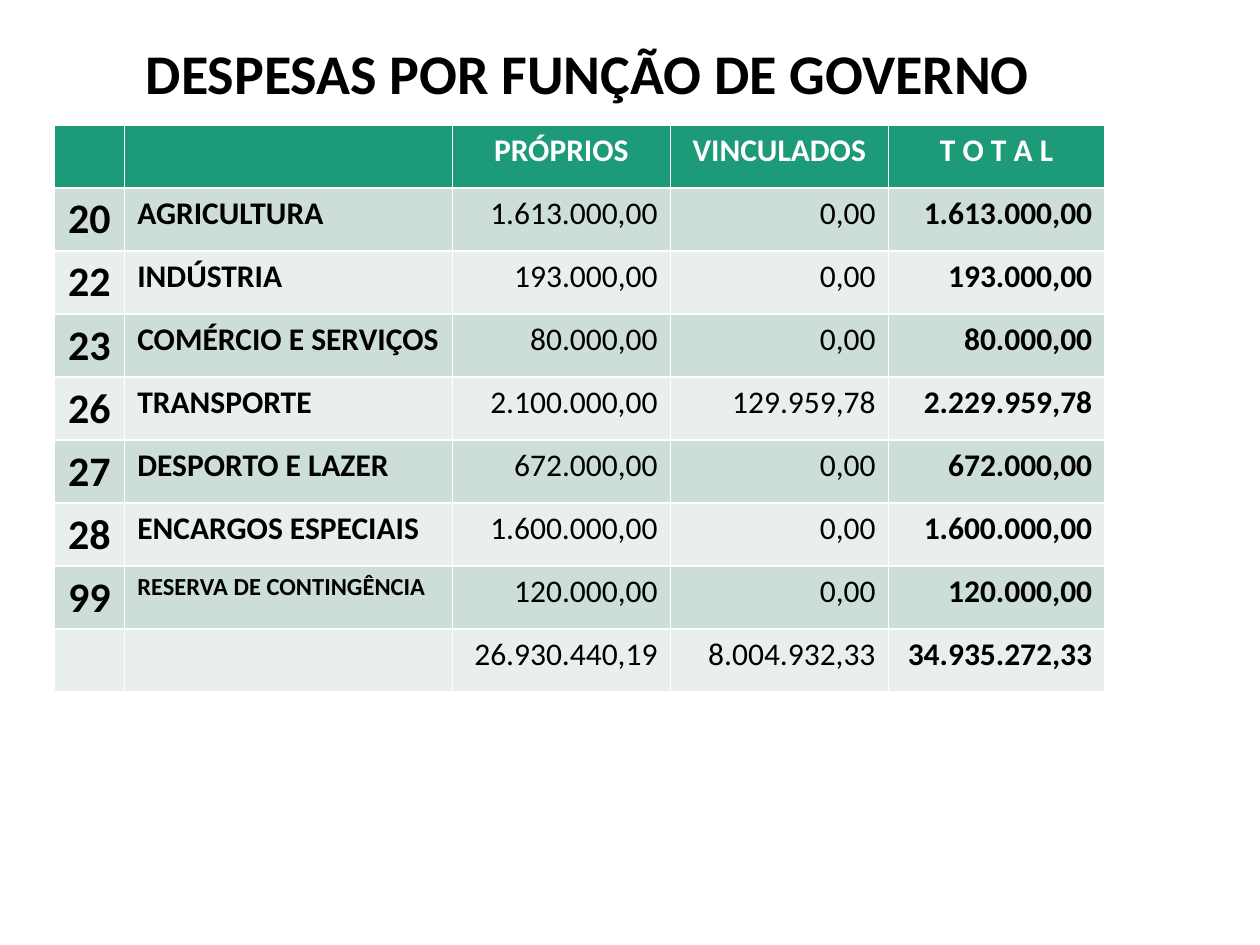
"""Build the slide with the table of expenses by government function."""
from pptx import Presentation
from pptx.dml.color import RGBColor
from pptx.enum.text import MSO_ANCHOR, PP_ALIGN
from pptx.util import Inches, Pt

TITLE = "DESPESAS POR FUNÇÃO DE GOVERNO"
HEADER = ("", "", "PRÓPRIOS", "VINCULADOS", "T O T A L")
EXPENSES = [
    ("20", "AGRICULTURA", "1.613.000,00", "0,00", "1.613.000,00"),
    ("22", "INDÚSTRIA", "193.000,00", "0,00", "193.000,00"),
    ("23", "COMÉRCIO E SERVIÇOS", "80.000,00", "0,00", "80.000,00"),
    ("26", "TRANSPORTE", "2.100.000,00", "129.959,78", "2.229.959,78"),
    ("27", "DESPORTO E LAZER", "672.000,00", "0,00", "672.000,00"),
    ("28", "ENCARGOS ESPECIAIS", "1.600.000,00", "0,00", "1.600.000,00"),
    ("99", "RESERVA DE CONTINGÊNCIA", "120.000,00", "0,00", "120.000,00"),
    ("", "", "26.930.440,19", "8.004.932,33", "34.935.272,33"),
]
COLUMNS = [
    (0.56, PP_ALIGN.CENTER, 24, True),
    (2.6, PP_ALIGN.LEFT, 18, True),
    (1.73, PP_ALIGN.RIGHT, 18, False),
    (1.73, PP_ALIGN.RIGHT, 18, False),
    (1.72, PP_ALIGN.RIGHT, 18, True),
]
SMALL_LABELS = {"RESERVA DE CONTINGÊNCIA": 14}
ROW_HEIGHT = 0.5

FONT = "Calibri"
BLACK = RGBColor(0x00, 0x00, 0x00)
WHITE = RGBColor(0xFF, 0xFF, 0xFF)
GREEN = RGBColor(0x1D, 0x9A, 0x78)
BANDS = (RGBColor(0xCD, 0xDE, 0xD6), RGBColor(0xE8, 0xEF, 0xEC))


def write(paragraph, text, size, color, bold, alignment):
    paragraph.alignment = alignment
    run = paragraph.add_run()
    run.text = text
    run.font.name = FONT
    run.font.size = Pt(size)
    run.font.bold = bold
    run.font.color.rgb = color


def add_title(slide):
    title = slide.shapes.add_textbox(Inches(0.5), Inches(0.3), Inches(8.33), Inches(0.61))
    frame = title.text_frame
    frame.word_wrap = True
    frame.vertical_anchor = MSO_ANCHOR.MIDDLE
    paragraph = frame.paragraphs[0]
    paragraph.line_spacing = 0.9
    write(paragraph, TITLE, 32, BLACK, True, PP_ALIGN.CENTER)


def add_expenses_table(slide):
    rows = [HEADER, *EXPENSES]
    width = sum(column[0] for column in COLUMNS)
    table = slide.shapes.add_table(
        len(rows), len(COLUMNS), Inches(0.43), Inches(0.99),
        Inches(width), Inches(ROW_HEIGHT * len(rows)),
    ).table
    for column, (column_width, *_) in zip(table.columns, COLUMNS):
        column.width = Inches(column_width)
    for row_index, values in enumerate(rows):
        is_header = row_index == 0
        for column_index, text in enumerate(values):
            cell = table.cell(row_index, column_index)
            cell.fill.solid()
            cell.fill.fore_color.rgb = GREEN if is_header else BANDS[(row_index - 1) % 2]
            if not text:
                continue
            paragraph = cell.text_frame.paragraphs[0]
            if is_header:
                write(paragraph, text, 18, WHITE, True, PP_ALIGN.CENTER)
            else:
                _, alignment, size, bold = COLUMNS[column_index]
                write(paragraph, text, SMALL_LABELS.get(text, size), BLACK, bold, alignment)


def main():
    presentation = Presentation()
    presentation.slide_width = Inches(10)
    presentation.slide_height = Inches(7.5)
    slide = presentation.slides.add_slide(presentation.slide_layouts[6])
    add_title(slide)
    add_expenses_table(slide)
    presentation.save("out.pptx")


if __name__ == "__main__":
    main()
